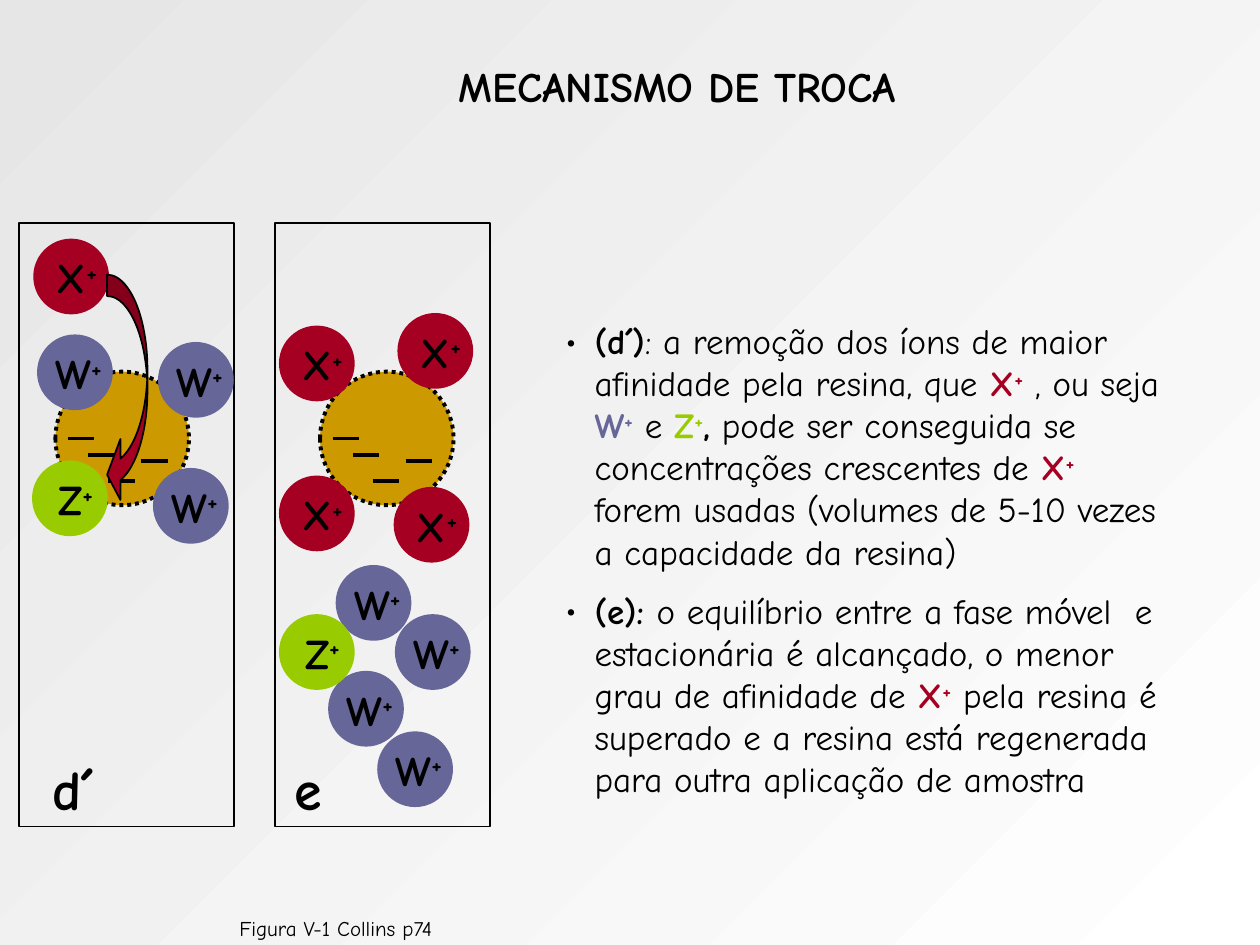
from lxml import etree
from pptx import Presentation
from pptx.dml.color import RGBColor
from pptx.enum.dml import MSO_LINE
from pptx.enum.shapes import MSO_CONNECTOR, MSO_SHAPE
from pptx.enum.text import MSO_ANCHOR, MSO_AUTO_SIZE, PP_ALIGN
from pptx.oxml.ns import qn
from pptx.util import Inches, Pt

FONT = "Comic Neue"
BLACK = "000000"
ION_COLORS = {"X": "A50021", "W": "666699", "Z": "99CC00"}
ION_SIZE = 0.57
RESIN_SIZE = 1.06
# Left and top of each charge mark, measured from the resin bead
CHARGE_OFFSETS = [(0.68, 0.71), (0.42, 0.87), (0.26, 0.66), (0.1, 0.53)]
CHARGE_LENGTH = 0.21


def rgb(color):
    return RGBColor.from_string(color)


def apply_format(target, values):
    for name, value in values.items():
        setattr(target, name, value)


def add_run(paragraph, text, size, color=BLACK, bold=False, raised=False):
    run = paragraph.add_run()
    run.text = text
    apply_format(run.font, {"name": FONT, "size": Pt(size), "bold": bold})
    run.font.color.rgb = rgb(color)
    if raised:
        run.font._element.set("baseline", "30000")


def add_ion_runs(paragraph, ion, size, color):
    add_run(paragraph, ion, size, color, bold=True)
    add_run(paragraph, "+", size, color, bold=True, raised=True)


def add_text_box(shapes, box, **frame_format):
    text_box = shapes.add_textbox(*map(Inches, box))
    values = {"word_wrap": True, "auto_size": MSO_AUTO_SIZE.SHAPE_TO_FIT_TEXT}
    apply_format(text_box.text_frame, {**values, **frame_format})
    return text_box.text_frame


def add_label(shapes, box, text, size, bold=True, **frame_format):
    paragraph = add_text_box(shapes, box, **frame_format).paragraphs[0]
    paragraph.alignment = PP_ALIGN.CENTER
    add_run(paragraph, text, size, bold=bold)


def add_outline(shapes, preset, box, fill=None, line=BLACK, width=1):
    shape = shapes.add_shape(preset, *map(Inches, box))
    shape.shadow.inherit = False
    if fill:
        shape.fill.solid()
        shape.fill.fore_color.rgb = rgb(fill)
    else:
        shape.fill.background()
    shape.line.color.rgb = rgb(line)
    shape.line.width = Pt(width)
    return shape


def add_resin(slide, left, top):
    """Resin bead with its negative charges."""
    shapes = slide.shapes.add_group_shape().shapes
    bead = add_outline(shapes, MSO_SHAPE.OVAL, (left, top, RESIN_SIZE, RESIN_SIZE),
                       "CC9900", width=2.25)
    bead.line.dash_style = MSO_LINE.ROUND_DOT
    for dx, dy in CHARGE_OFFSETS:
        x, y = left + dx, top + dy
        charge = shapes.add_connector(MSO_CONNECTOR.STRAIGHT, Inches(x), Inches(y),
                                      Inches(x + CHARGE_LENGTH), Inches(y))
        charge.line.color.rgb = rgb(BLACK)
        charge.line.width = Pt(2.25)
        etree.SubElement(charge._element.spPr, qn("a:effectLst"))


def add_ion(slide, ion, left, top):
    """Coloured ion with its symbol."""
    shapes = slide.shapes.add_group_shape().shapes
    color = ION_COLORS[ion]
    add_outline(shapes, MSO_SHAPE.OVAL, (left, top, ION_SIZE, ION_SIZE), color, color, 2.25)
    dx, width = (-0.03, 0.69) if ion == "W" else (0.03, 0.6)
    frame = add_text_box(shapes, (left + dx, top + 0.04, width, 0.5))
    frame.paragraphs[0].alignment = PP_ALIGN.CENTER
    add_ion_runs(frame.paragraphs[0], ion, 24, BLACK)


def add_panel(slide, box, resin_left, ions, label, label_width):
    """Framed stage of the exchange: resin, ions and letter."""
    left, top, _, height = box
    add_outline(slide.shapes, MSO_SHAPE.RECTANGLE, box)
    add_resin(slide, left + resin_left, top + 1.18)
    for ion, dx, dy in ions:
        add_ion(slide, ion, left + dx, top + dy)
    add_label(slide.shapes, (left, top + height - 0.62, label_width, 0.63), label, 32)


def add_exchange_arrow(slide, box):
    arrow = add_outline(slide.shapes, MSO_SHAPE.CURVED_LEFT_ARROW, box, ION_COLORS["X"])
    for index, value in enumerate((0.53, 1.51, 0.33)):
        arrow.adjustments[index] = value


def add_explanation(slide, box, items):
    """Bulleted text; a plain string is text, a pair is (text, kind)."""
    frame = add_text_box(slide.shapes, box)
    for index, item in enumerate(items):
        paragraph = frame.add_paragraph() if index else frame.paragraphs[0]
        if index:
            paragraph.space_before = Pt(10)
        properties = paragraph._p.get_or_add_pPr()
        indent = Inches(0.23)
        properties.set("marL", str(indent))
        properties.set("indent", str(-indent))
        etree.SubElement(properties, qn("a:buFont"), typeface=FONT)
        etree.SubElement(properties, qn("a:buChar"), char="•")
        for part in item:
            text, kind = (part, "plain") if isinstance(part, str) else part
            if kind == "ion":
                add_ion_runs(paragraph, text, 20, ION_COLORS[text])
            else:
                add_run(paragraph, text, 20, bold=kind == "bold")


def set_background(slide):
    fill = slide.background.fill
    fill.gradient()
    fill.gradient_angle = 135
    for stop, color in zip(fill.gradient_stops, ("FFFFFF", "E6E6E6")):
        stop.color.rgb = rgb(color)


def main():
    presentation = Presentation()
    apply_format(presentation, {"slide_width": Inches(10), "slide_height": Inches(7.5)})
    slide = presentation.slides.add_slide(presentation.slide_layouts[6])
    set_background(slide)

    # Title and source
    add_label(slide.shapes, (0.75, 0, 9.25, 1.36), "MECANISMO DE TROCA", 24,
              auto_size=MSO_AUTO_SIZE.NONE, vertical_anchor=MSO_ANCHOR.MIDDLE)
    add_label(slide.shapes, (0.65, 7.27, 4.03, 0.2), "Figura V-1 Collins p74", 12, bold=False,
              margin_left=0, margin_top=0, margin_right=0, margin_bottom=0)

    # Stages d´ and e
    ions_before = [("X", 0.13, 0.14), ("W", 0.16, 0.9), ("W", 1.08, 1.96),
                   ("W", 1.12, 0.96), ("Z", 0.12, 1.9)]
    ions_after = [("X", 0.05, 0.83), ("X", 0.99, 0.73), ("X", 0.05, 2.02), ("X", 0.96, 2.11),
                  ("W", 0.97, 3.12), ("W", 0.44, 3.57), ("W", 0.5, 2.73), ("W", 0.83, 4.05),
                  ("Z", 0.05, 3.12)]
    add_panel(slide, (0.15, 1.77, 1.71, 4.79), 0.29, ions_before, "d´", 0.86)
    add_exchange_arrow(slide, (0.85, 2.18, 0.32, 1.83))
    add_panel(slide, (2.18, 1.77, 1.71, 4.79), 0.36, ions_after, "e", 0.53)

    # Explanation
    add_explanation(slide, (4.39, 2.49, 5.01, 3.93), [
        [("(d´)", "bold"), ": a remoção dos íons de maior afinidade pela resina, que ",
         ("X", "ion"), " , ou seja ", ("W", "ion"), " e ", ("Z", "ion"), (",", "bold"),
         " pode ser conseguida se concentrações crescentes de ", ("X", "ion"),
         " forem usadas (volumes de 5-10 vezes a capacidade da resina)"],
        [("(e): ", "bold"), "o equilíbrio entre a fase móvel  e estacionária é alcançado, "
         "o menor grau de afinidade de ", ("X", "ion"),
         " pela resina é superado e a resina está regenerada para outra aplicação de amostra"],
    ])
    presentation.save("out.pptx")


if __name__ == "__main__":
    main()
